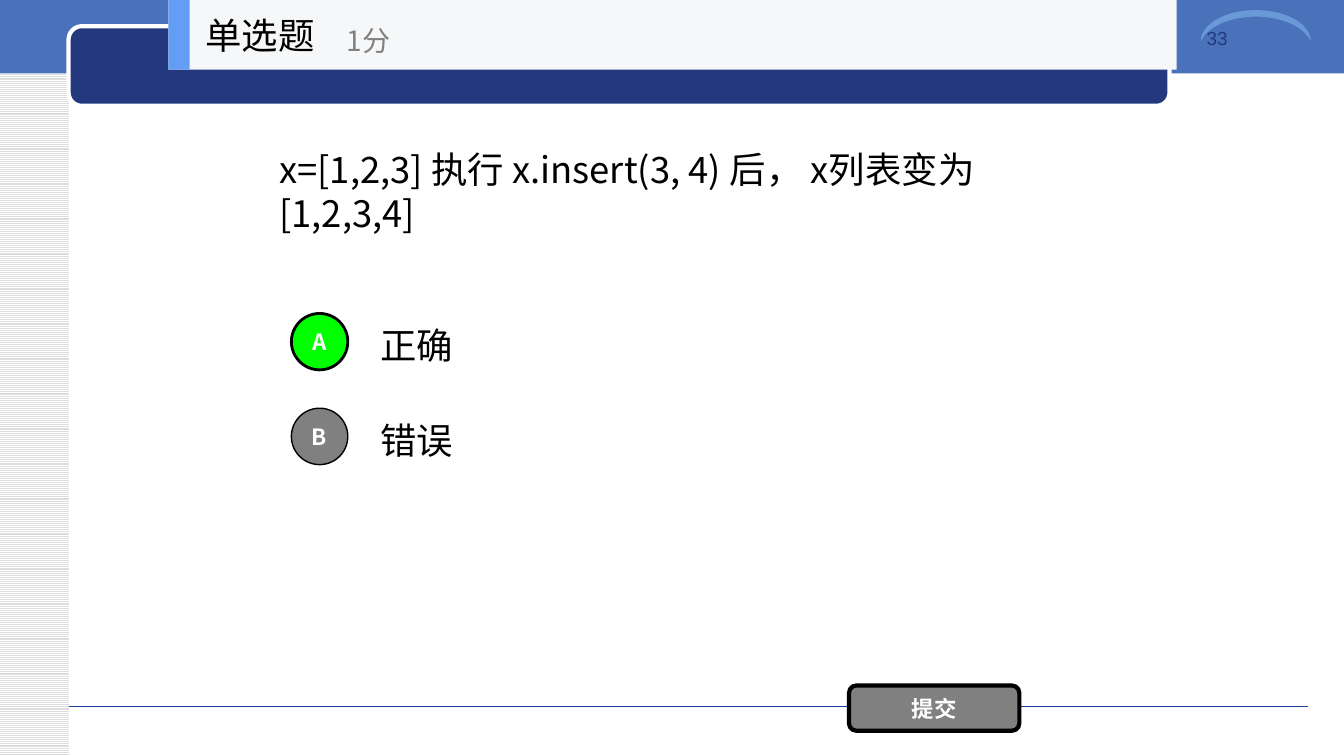
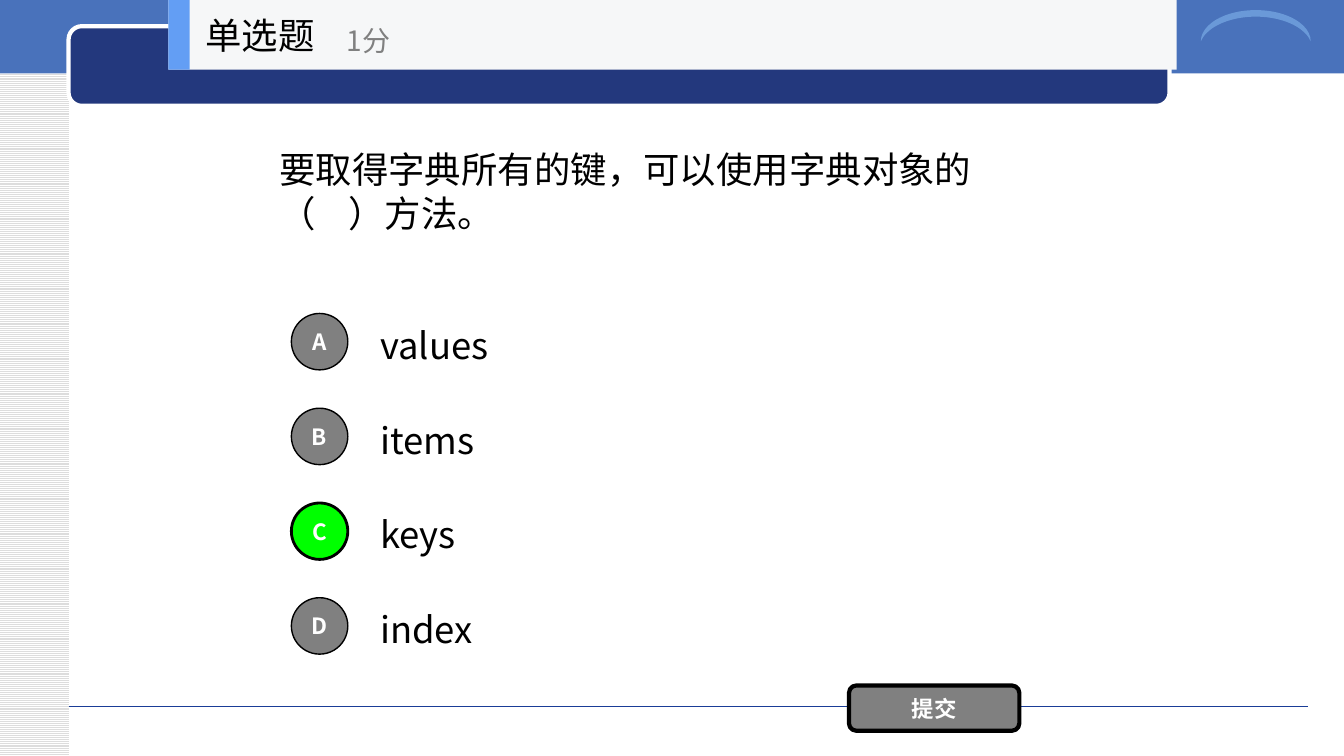
from dataclasses import dataclass
from typing import Optional

from lxml import etree
from pptx import Presentation
from pptx.dml.color import RGBColor
from pptx.enum.dml import MSO_PATTERN_TYPE
from pptx.enum.shapes import MSO_CONNECTOR_TYPE, MSO_SHAPE
from pptx.enum.text import MSO_ANCHOR, MSO_AUTO_SIZE, PP_ALIGN
from pptx.oxml.ns import qn
from pptx.util import Inches, Pt

WHITE = RGBColor(0xFF, 0xFF, 0xFF)
BLACK = RGBColor(0x00, 0x00, 0x00)
GRAY = RGBColor(0x80, 0x80, 0x80)
STRIPE = RGBColor(0xDD, 0xDD, 0xDD)
GREEN = RGBColor(0x00, 0xFF, 0x00)
NAVY = RGBColor(0x23, 0x38, 0x7D)
BAND_BLUE = RGBColor(0x49, 0x72, 0xBB)
RULE_BLUE = RGBColor(0x1A, 0x3D, 0x97)
MOON_BLUE = RGBColor(0x6A, 0x99, 0xD8)
ACCENT_BLUE = RGBColor(0x63, 0x9E, 0xF4)
HEADER_GRAY = RGBColor(0xF6, 0xF7, 0xF8)

RECTANGLE = MSO_SHAPE.RECTANGLE
ROUNDED = MSO_SHAPE.ROUNDED_RECTANGLE
OVAL = MSO_SHAPE.OVAL
MOON = MSO_SHAPE.MOON
STRAIGHT = MSO_CONNECTOR_TYPE.STRAIGHT
LIGHT_HORIZONTAL = MSO_PATTERN_TYPE.LIGHT_HORIZONTAL
LEFT = PP_ALIGN.LEFT
CENTER = PP_ALIGN.CENTER
TOP = MSO_ANCHOR.TOP
MIDDLE = MSO_ANCHOR.MIDDLE
NO_AUTOFIT = MSO_AUTO_SIZE.NONE

FONT = "Noto Sans CJK SC"
NUMBER_FONT = "Arial"
TEXT_SIZE = 26
LINE_HEIGHT = Pt(31.4)
OPTION_PITCH = 0.94
BADGE_TOP = 3.11
BADGE_SIZE = 0.56


@dataclass(frozen=True)
class Box:
    left: float
    top: float
    width: float
    height: float

    def lengths(self) -> tuple:
        return tuple(Inches(value) for value in (self.left, self.top, self.width, self.height))


@dataclass(frozen=True)
class Question:
    text: str
    options: tuple[str, ...]
    answer: int
    number: Optional[str] = None


QUESTIONS = (
    Question("x=[1,2,3] 执行 x.insert(3, 4) 后， x列表变为 [1,2,3,4]", ("正确", "错误"), 0, "33"),
    Question("要取得字典所有的键，可以使用字典对象的（    ）方法。",
             ("values", "items", "keys", "index"), 2),
)


def write_text(text_frame, text: str, *, size: float = TEXT_SIZE, color: RGBColor = BLACK,
               font: str = FONT, bold: bool = False, align=LEFT, anchor=MIDDLE,
               line_spacing=None, space_after=None) -> None:
    text_frame.word_wrap = True
    text_frame.auto_size = NO_AUTOFIT
    text_frame.vertical_anchor = anchor
    text_frame.text = text
    for paragraph in text_frame.paragraphs:
        paragraph.alignment = align
        paragraph.line_spacing = line_spacing
        paragraph.space_before = Pt(0)
        paragraph.space_after = space_after
        for run in paragraph.runs:
            run.font.size = Pt(size)
            run.font.bold = bold
            run.font.color.rgb = color
            run.font.name = font
            east_asian = etree.SubElement(run.font._element, qn("a:ea"))
            east_asian.set("typeface", font)


def add_text(shapes, box: Box, text: str, **text_format) -> None:
    write_text(shapes.add_textbox(*box.lengths()).text_frame, text, **text_format)


def add_box(shapes, kind, box: Box, fill: RGBColor, *, line: Optional[RGBColor] = None,
            line_width: float = 1):
    shape = shapes.add_shape(kind, *box.lengths())
    shape.shadow.inherit = False
    shape.fill.solid()
    shape.fill.fore_color.rgb = fill
    if line is None:
        shape.line.fill.background()
    else:
        shape.line.color.rgb = line
        shape.line.width = Pt(line_width)
    return shape


def add_button(shapes, kind, box: Box, text: str, fill: RGBColor, line_width: float) -> None:
    shape = add_box(shapes, kind, box, fill, line=BLACK, line_width=line_width)
    frame = shape.text_frame
    frame.margin_left = frame.margin_right = frame.margin_top = frame.margin_bottom = 0
    write_text(frame, text, size=16, color=WHITE, bold=True, align=CENTER)


def move_placeholder(placeholder, box: Box) -> None:
    placeholder.left, placeholder.top, placeholder.width, placeholder.height = box.lengths()


def decorate_layout(layout, slide) -> None:
    for placeholder in list(layout.placeholders):
        if placeholder.placeholder_format.idx >= 10:
            layout.shapes.element.remove(placeholder.element)
    shapes = slide.shapes
    stripes = add_box(shapes, RECTANGLE, Box(0, 0, 0.68, 7.5), WHITE)
    stripes.fill.patterned()
    stripes.fill.pattern = LIGHT_HORIZONTAL
    stripes.fill.fore_color.rgb = STRIPE
    stripes.fill.back_color.rgb = WHITE
    band = add_box(shapes, RECTANGLE, Box(0, -0.03, 13.33, 0.76), BAND_BLUE)
    rule = shapes.add_connector(STRAIGHT, Inches(0.68), Inches(7.01), Inches(12.97), Inches(7.01))
    rule.line.color.rgb = RULE_BLUE
    rule.line.width = Pt(0.5)
    etree.SubElement(rule.element.spPr, qn("a:effectLst"))
    plate = add_box(shapes, ROUNDED, Box(0.68, 0.26, 10.92, 0.79), NAVY, line=WHITE, line_width=3)
    moon = add_box(shapes, MOON, Box(12.3, -0.29, 0.31, 1.09), MOON_BLUE)
    moon.adjustments[0] = 0.21
    moon.rotation = 90
    for shape in (stripes, band, rule, plate, moon):
        layout.shapes.element.append(shape.element)


def add_header(slide) -> None:
    shapes = slide.shapes.add_group_shape().shapes
    add_box(shapes, RECTANGLE, Box(1.67, 0, 10, 0.69), HEADER_GRAY)
    add_box(shapes, RECTANGLE, Box(1.67, 0, 0.21, 0.69), ACCENT_BLUE)
    add_text(shapes, Box(1.94, 0, 2.08, 0.69), "单选题")
    add_text(shapes, Box(3.34, 0.12, 2.5, 0.56), "1分", size=20, color=GRAY)


def add_options(slide, question: Question) -> None:
    body = slide.placeholders[1]
    count = len(question.options)
    move_placeholder(body, Box(3.67, 3.2, 7, count * OPTION_PITCH))
    body.text_frame.margin_top = 0
    write_text(body.text_frame, "\n".join(question.options), anchor=TOP,
               line_spacing=LINE_HEIGHT, space_after=Inches(OPTION_PITCH) - LINE_HEIGHT)
    for paragraph in body.text_frame.paragraphs:
        properties = paragraph._p.get_or_add_pPr()
        properties.set("marL", "0")
        properties.set("indent", "0")
        etree.SubElement(properties, qn("a:buNone"))
    for index, letter in enumerate("ABCD"[:count]):
        correct = index == question.answer
        box = Box(2.89, BADGE_TOP + index * OPTION_PITCH, BADGE_SIZE, BADGE_SIZE)
        add_button(slide.shapes, OVAL, box, letter, GREEN if correct else GRAY, 2 if correct else 1)


def fill_slide(slide, question: Question) -> None:
    title = slide.shapes.title
    move_placeholder(title, Box(2.67, 0.72, 8, 2.34))
    write_text(title.text_frame, question.text, line_spacing=LINE_HEIGHT)
    if question.number:
        add_text(slide.shapes, Box(11.87, 0.21, 1.21, 0.71), question.number,
                 size=13.5, color=NAVY, font=NUMBER_FONT, anchor=TOP)
    add_options(slide, question)
    add_button(slide.shapes, ROUNDED, Box(8.42, 6.8, 1.69, 0.45), "提交", GRAY, 3)
    add_header(slide)


def main() -> None:
    presentation = Presentation()
    presentation.slide_width = Inches(13.33)
    presentation.slide_height = Inches(7.5)
    layout = presentation.slide_layouts[1]
    slides = [presentation.slides.add_slide(layout) for _ in QUESTIONS]
    decorate_layout(layout, slides[0])
    for slide, question in zip(slides, QUESTIONS):
        fill_slide(slide, question)
    presentation.save("out.pptx")


if __name__ == "__main__":
    main()
